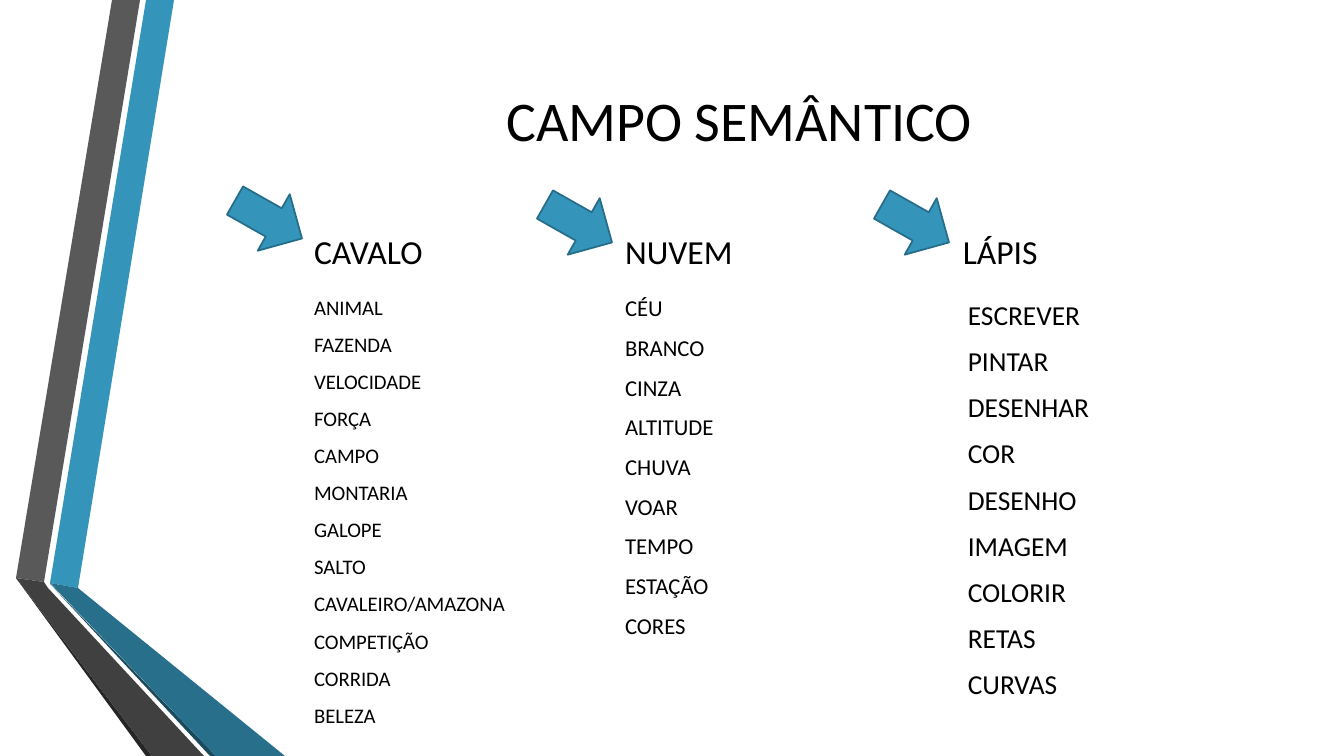
from dataclasses import dataclass

from lxml.etree import SubElement
from pptx import Presentation
from pptx.dml.color import RGBColor
from pptx.enum.shapes import MSO_SHAPE
from pptx.enum.text import MSO_ANCHOR, MSO_AUTO_SIZE, PP_ALIGN
from pptx.oxml.ns import qn
from pptx.util import Pt

EMU_PER_PX = 914400 / 100.8


@dataclass(frozen=True)
class Theme:
    font: str = "Calibri"
    text: str = "000000"
    accent: str = "3494BA"
    accent_line: str = "266D8A"
    accent_dark: str = "276F8B"
    accent_shade: str = "1A4A5D"
    gray: str = "595959"
    gray_dark: str = "404040"
    gray_shade: str = "262626"
    title_size: float = 40
    heading_size: float = 24


THEME = Theme()

BANDS = [
    (THEME.accent, [(50, 583), (78, 588), (174, 0), (146, 0)]),
    (THEME.gray, [(140, 0), (112, 0), (16, 578), (44, 582)]),
    (THEME.gray_shade, [(16, 578), (146, 756), (152, 756)]),
    (THEME.accent_shade, [(50, 584), (210, 756), (216, 756)]),
    (THEME.accent_dark, [(50, 583), (216, 756), (285, 756), (78, 588)]),
    (THEME.gray_dark, [(204, 756), (48, 588), (44, 582), (16, 578), (152, 756)]),
]

COLUMNS = [
    {
        "heading": "CAVALO",
        "heading_box": (304, 201, 162, 76),
        "words": ["ANIMAL", "FAZENDA", "VELOCIDADE", "FORÇA", "CAMPO", "MONTARIA",
                  "GALOPE", "SALTO", "CAVALEIRO/AMAZONA", "COMPETIÇÃO", "CORRIDA",
                  "BELEZA"],
        "words_box": (304, 290, 241, 442),
        "words_size": 14.8,
        "arrow_box": (230, 187, 77, 65),
    },
    {
        "heading": "NUVEM",
        "heading_box": (615, 201, 162, 76),
        "words": ["CÉU", "BRANCO", "CINZA", "ALTITUDE", "CHUVA", "VOAR", "TEMPO",
                  "ESTAÇÃO", "CORES"],
        "words_box": (615, 289, 174, 379),
        "words_size": 16.2,
        "arrow_box": (540, 191, 77, 65),
    },
    {
        "heading": "LÁPIS",
        "heading_box": (953, 201, 352, 76),
        "words": ["ESCREVER", "PINTAR", "DESENHAR", "COR", "DESENHO", "IMAGEM",
                  "COLORIR", "RETAS", "CURVAS"],
        "words_box": (958, 293, 347, 419),
        "words_size": 19.6,
        "arrow_box": (877, 191, 77, 65),
    },
]


def px(length):
    return round(length * EMU_PER_PX)


def apply_format(target, values):
    for name, value in values.items():
        setattr(target, name, value)


def place(shape, box):
    apply_format(shape, dict(zip(("left", "top", "width", "height"), map(px, box))))


def fill_solid(shape, color):
    shape.shadow.inherit = False
    shape.fill.solid()
    shape.fill.fore_color.rgb = RGBColor.from_string(color)


def remove_bullet(paragraph):
    properties = paragraph._p.get_or_add_pPr()
    properties.set("marL", "0")
    properties.set("indent", "0")
    SubElement(properties, qn("a:buNone"))


def write_text(shape, box, lines, size, anchor, paragraph_format):
    place(shape, box)
    frame = shape.text_frame
    frame.text = "\n".join(lines)
    apply_format(frame, {
        "word_wrap": True,
        "auto_size": MSO_AUTO_SIZE.NONE,
        "vertical_anchor": anchor,
    })
    for index, paragraph in enumerate(frame.paragraphs):
        remove_bullet(paragraph)
        apply_format(paragraph, paragraph_format)
        if index == 0:
            paragraph.space_before = Pt(0)
        apply_format(paragraph.font, {"name": THEME.font, "size": Pt(size), "bold": False})
        paragraph.font.color.rgb = RGBColor.from_string(THEME.text)


def add_band(slide, color, points):
    corners = [(px(x), px(y)) for x, y in points]
    builder = slide.shapes.build_freeform(*corners[0])
    builder.add_line_segments(corners[1:], close=True)
    band = builder.convert_to_shape()
    fill_solid(band, color)
    band.line.fill.background()


def add_arrow(slide, box):
    arrow = slide.shapes.add_shape(MSO_SHAPE.RIGHT_ARROW, *map(px, box))
    arrow.rotation = 29.5
    fill_solid(arrow, THEME.accent)
    arrow.line.color.rgb = RGBColor.from_string(THEME.accent_line)
    arrow.line.width = Pt(1.25)


def add_column(slide, column, heading, words):
    write_text(heading, column["heading_box"], [column["heading"]], THEME.heading_size,
               MSO_ANCHOR.BOTTOM, {"line_spacing": 0.9, "space_after": Pt(6)})
    size = column["words_size"]
    write_text(words, column["words_box"], column["words"], size, MSO_ANCHOR.TOP,
               {"space_before": Pt(round(0.18 * size, 1)), "space_after": Pt(6)})
    add_arrow(slide, column["arrow_box"])


def main():
    presentation = Presentation()
    apply_format(presentation, {"slide_width": px(1344), "slide_height": px(756)})
    slide = presentation.slides.add_slide(
        presentation.slide_layouts.get_by_name("Comparison"))

    for color, points in BANDS:
        add_band(slide, color, points)

    write_text(slide.shapes.title, (392, 14, 590, 210), ["CAMPO SEMÂNTICO"],
               THEME.title_size, MSO_ANCHOR.MIDDLE, {"alignment": PP_ALIGN.RIGHT})

    holders = slide.placeholders
    last_boxes = [slide.shapes.add_textbox(0, 0, 0, 0) for _ in range(2)]
    text_pairs = [(holders[1], holders[2]), (holders[3], holders[4]), last_boxes]
    for column, (heading, words) in zip(COLUMNS, text_pairs):
        add_column(slide, column, heading, words)

    presentation.save("out.pptx")


if __name__ == "__main__":
    main()
